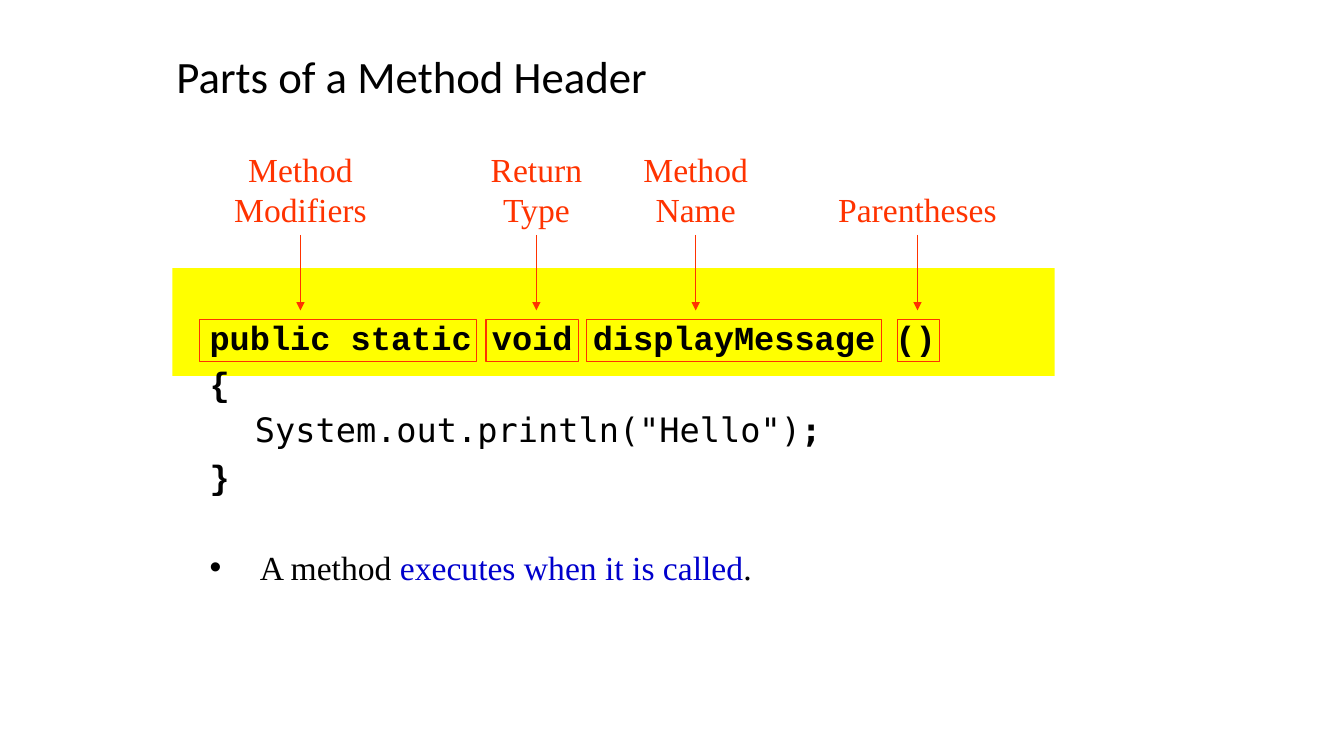
from pptx import Presentation
from pptx import util as u
from pptx.dml.color import RGBColor
from pptx.enum import shapes, text
from pptx.oxml.ns import qn
from lxml import etree

COLORS = {"ink": "000000", "label": "FF3300", "band": "FFFF00", "accent": "0000CC"}
SERIF, CODE, MONO = "Times New Roman", "Courier New", "DejaVu Sans Mono"

# Header parts: label, arrow x, label width, label height, frame left, frame width
PARTS = [
    ("Method Modifiers", 2.98, 1.75, 0.9, 1.98, 2.75),
    ("Return Type", 5.32, 1.25, 0.9, 4.82, 0.92),
    ("Method Name", 6.9, 1.33, 0.9, 5.82, 2.92),
    ("Parentheses", 9.1, 1.77, 0.5, 8.9, 0.42),
]


def rgb(name):
    return RGBColor.from_string(COLORS[name])


def box(left, top, width, height):
    return [u.Inches(v) for v in (left, top, width, height)]


def add_run(p, content, size=24, font=SERIF, color="ink", bold=False):
    r = p.add_run()
    r.text = content
    r.font.size, r.font.name, r.font.bold = u.Pt(size), font, bold
    r.font.color.rgb = rgb(color)
    return r


def add_rect(slide, left, top, width, height, fill=None, line=None):
    sp = slide.shapes.add_shape(shapes.MSO_SHAPE.RECTANGLE, *box(left, top, width, height))
    sp.shadow.inherit = False
    if fill:
        sp.fill.solid()
        sp.fill.fore_color.rgb = rgb(fill)
    else:
        sp.fill.background()
    if line:
        sp.line.color.rgb = rgb(line)
        sp.line.width = u.Pt(0.75)
    else:
        sp.line.fill.background()
    return sp


def add_title(slide, left, top, width, height):
    sp = slide.shapes.title
    sp.left, sp.top, sp.width, sp.height = box(left, top, width, height)
    tf = sp.text_frame
    tf.vertical_anchor = text.MSO_ANCHOR.MIDDLE
    p = tf.paragraphs[0]
    p.alignment, p.line_spacing = text.PP_ALIGN.LEFT, 0.9
    add_run(p, "Parts of a Method Header", size=32, font="Calibri")


def set_paragraph(p, margin, indent, before=10, bullet=None):
    p.line_spacing, p.space_before = 0.8, u.Pt(before)
    pPr = p._p.get_or_add_pPr()
    pPr.set("marL", str(u.Inches(margin)))
    pPr.set("indent", str(u.Inches(indent)))
    if bullet:
        etree.SubElement(pPr, qn("a:buFont")).set("typeface", "Arial")
        etree.SubElement(pPr, qn("a:buChar")).set("char", bullet)


def add_code(slide, left, top, width, height):
    tf = slide.shapes.add_textbox(*box(left, top, width, height)).text_frame
    tf.word_wrap = True
    code = {"font": CODE, "bold": True}
    hanging = {"margin": 0.25, "indent": -0.25}
    lines = [
        (hanging, [("public static void displayMessage ()", code)]),
        (hanging, [("{", code)]),
        ({"margin": 0.45, "indent": 0},
         [('System.out.println("Hello")', {"font": MONO}), (";", {"font": MONO, "bold": True})]),
        (hanging, [("}", code)]),
        ({"margin": 0.5, "indent": -0.5, "before": 42, "bullet": "•"},
         [("A method ", {}), ("executes when it is called", {"color": "accent"}), (".", {})]),
    ]
    for i, (layout, runs) in enumerate(lines):
        p = tf.add_paragraph() if i else tf.paragraphs[0]
        set_paragraph(p, **layout)
        for content, style in runs:
            add_run(p, content, **style)


def add_label(slide, content, center, bottom, width, height):
    sp = slide.shapes.add_textbox(*box(center - width / 2, bottom - height, width, height))
    tf = sp.text_frame
    tf.word_wrap = " " in content
    p = tf.paragraphs[0]
    p.alignment = text.PP_ALIGN.CENTER
    add_run(p, content, color="label")
    return sp


def add_arrow(slide, label, x, top, bottom):
    cx = slide.shapes.add_connector(
        shapes.MSO_CONNECTOR.STRAIGHT, *box(x, top, x, bottom))
    cx.begin_connect(label, 2)
    cx.line.color.rgb = rgb("label")
    cx.line.width = u.Pt(0.75)
    etree.SubElement(cx.line._get_or_add_ln(), qn("a:tailEnd")).set("type", "triangle")
    etree.SubElement(cx._element.spPr, qn("a:effectLst"))


def add_callouts(slide, label_bottom, frame_top):
    for content, x, width, height, frame_left, frame_width in PARTS:
        add_rect(slide, frame_left, frame_top, frame_width, 0.42, line="label")
        label = add_label(slide, content, x, label_bottom, width, height)
        add_arrow(slide, label, x, label_bottom, frame_top - 0.09)


def main():
    prs = Presentation()
    prs.slide_width, prs.slide_height = u.Inches(13.33), u.Inches(7.5)
    slide = prs.slides.add_slide(prs.slide_layouts[5])
    add_title(slide, 1.65, 0.24, 4.88, 1.09)
    # Highlight band behind the method header
    add_rect(slide, 1.71, 2.66, 8.75, 1.07, fill="band")
    add_code(slide, 1.98, 3.17, 8.5, 2.75)
    # Frames, labels and arrows
    add_callouts(slide, label_bottom=2.33, frame_top=3.17)
    prs.save("out.pptx")


if __name__ == "__main__":
    main()
